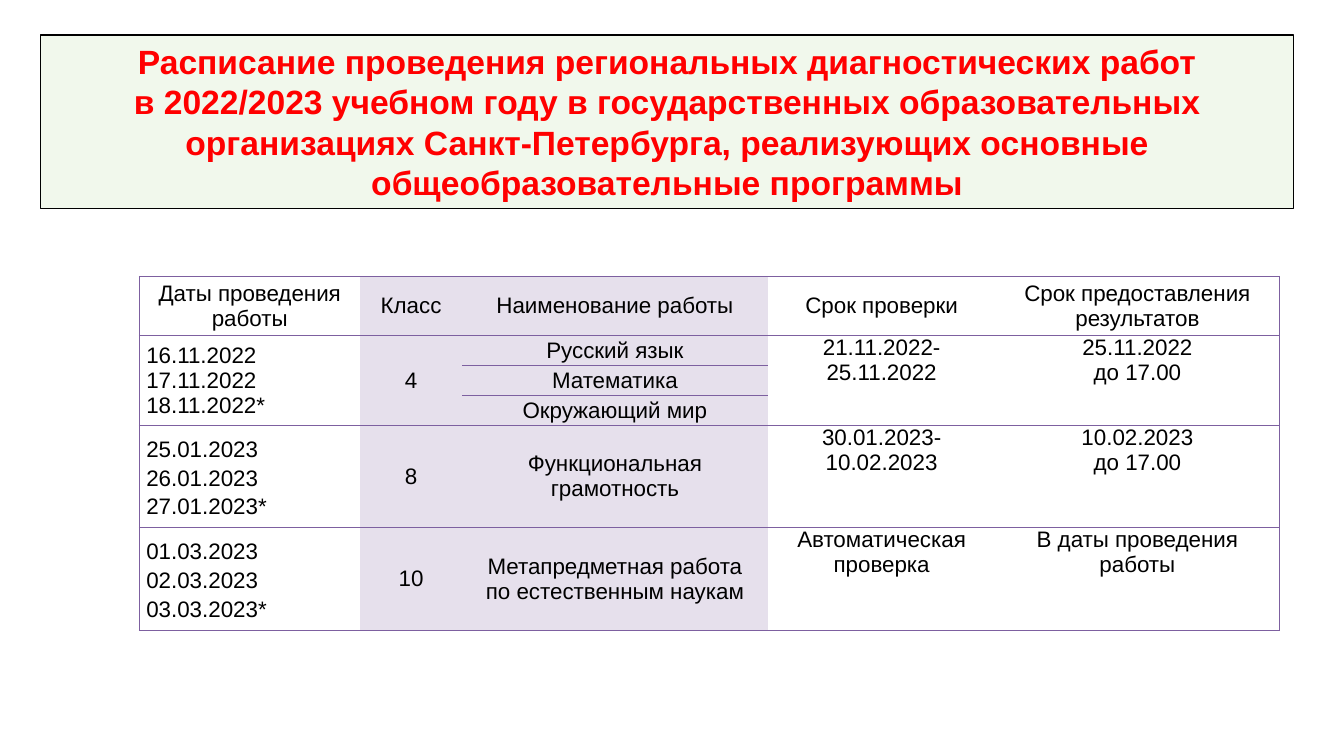
from lxml import etree
from pptx import Presentation, util as u
from pptx.dml.color import RGBColor
from pptx.enum import shapes, text
from pptx.oxml.ns import qn

Pt = u.Pt
COLORS = {"title": "FF0000", "title_fill": "F1F8EC", "ink": "000000",
          "band": "E6E0EC", "border": "7D60A0"}
NO_STYLE = "{2D5ABB26-0587-4C30-8999-92F81FD0307C}"


def add_text(tf, lines, size, color, align, bold=False, spacing=None):
    for i, line in enumerate(lines):
        p = tf.add_paragraph() if i else tf.paragraphs[0]
        p.alignment = align
        if spacing:
            p.line_spacing = spacing
        for j, piece in enumerate(line.split("\v")):
            if j:
                p.add_line_break()
            r = p.add_run()
            r.text = piece
            r.font.name = "Arial"
            r.font.size = Pt(size)
            r.font.bold = bold
            r.font.color.rgb = RGBColor.from_string(COLORS[color])


def add_border(cell, side):
    ln = etree.SubElement(cell._tc.get_or_add_tcPr(), qn("a:ln" + side), w=str(Pt(0.75)))
    fill = etree.SubElement(ln, qn("a:solidFill"))
    etree.SubElement(fill, qn("a:srgbClr"), val=COLORS["border"])


prs = Presentation()
prs.slide_width, prs.slide_height = Pt(960), Pt(540)
s = prs.slides.add_slide(prs.slide_layouts[6])

sp = s.shapes.add_shape(shapes.MSO_SHAPE.RECTANGLE, Pt(29), Pt(25), Pt(895), Pt(123.8))
sp.shadow.inherit = False
sp.fill.solid()
sp.fill.fore_color.rgb = RGBColor.from_string(COLORS["title_fill"])
sp.line.color.rgb = RGBColor.from_string(COLORS["ink"])
sp.line.width = Pt(0.75)
tf = sp.text_frame
tf.word_wrap = True
tf.auto_size = text.MSO_AUTO_SIZE.SHAPE_TO_FIT_TEXT
title = [
    "Расписание проведения региональных диагностических работ",
    "в 2022/2023 учебном году в государственных образовательных организациях "
    "Санкт-Петербурга, реализующих основные общеобразовательные программы",
]
add_text(tf, title, 24, "title", text.PP_ALIGN.CENTER, bold=True)

rows = [
    ["Даты проведения работы", "Класс", "Наименование работы", "Срок проверки",
     "Срок предоставления результатов"],
    ["16.11.2022\n17.11.2022\n18.11.2022*", "4", "Русский язык",
     "21.11.2022-25.11.2022", "25.11.2022\nдо 17.00"],
    ["", "", "Математика", "", ""],
    ["", "", "Окружающий мир", "", ""],
    ["25.01.2023\n26.01.2023\n27.01.2023*", "8", "Функциональная грамотность",
     "30.01.2023-10.02.2023", "10.02.2023\nдо 17.00"],
    ["01.03.2023\n02.03.2023\n03.03.2023*", "10",
     "Метапредметная работа\vпо естественным наукам",
     "Автоматическая проверка", "В даты проведения работы"],
]
widths = [157.8, 72.8, 218.4, 162.6, 202.8]
heights = [42.6, 21.3, 21.3, 21.3, 73.2, 73.2]

frame = s.shapes.add_table(len(rows), len(widths), Pt(99.5), Pt(197.3),
                           Pt(sum(widths)), Pt(sum(heights)))
table = frame.table
table.first_row = table.horz_banding = False
table._tbl.tblPr.find(qn("a:tableStyleId")).text = NO_STYLE
for column, width in zip(table.columns, widths):
    column.width = Pt(width)
for row, height in zip(table.rows, heights):
    row.height = Pt(height)
for c in (0, 1, 3, 4):
    table.cell(1, c).merge(table.cell(3, c))

for i, row in enumerate(rows):
    for c, content in enumerate(row):
        cell = table.cell(i, c)
        sides = {0: ["L"], 4: ["R"]}.get(c, [])
        if not cell.is_spanned:
            sides = sides + ["T", "B"]
        for side in sides:
            add_border(cell, side)
        if c in (1, 2):
            cell.fill.solid()
            cell.fill.fore_color.rgb = RGBColor.from_string(COLORS["band"])
        else:
            cell.fill.background()
        if cell.is_spanned:
            continue
        cell.margin_left = cell.margin_right = Pt(5)
        cell.margin_top = cell.margin_bottom = Pt(0)
        top = i > 0 and c > 2
        cell.vertical_anchor = text.MSO_ANCHOR.TOP if top else text.MSO_ANCHOR.MIDDLE
        dates = i > 0 and c == 0
        add_text(cell.text_frame, content.split("\n"), 16, "ink",
                 text.PP_ALIGN.JUSTIFY if dates else text.PP_ALIGN.CENTER,
                 spacing=1.15 if dates and i > 3 else None)

prs.save("out.pptx")
